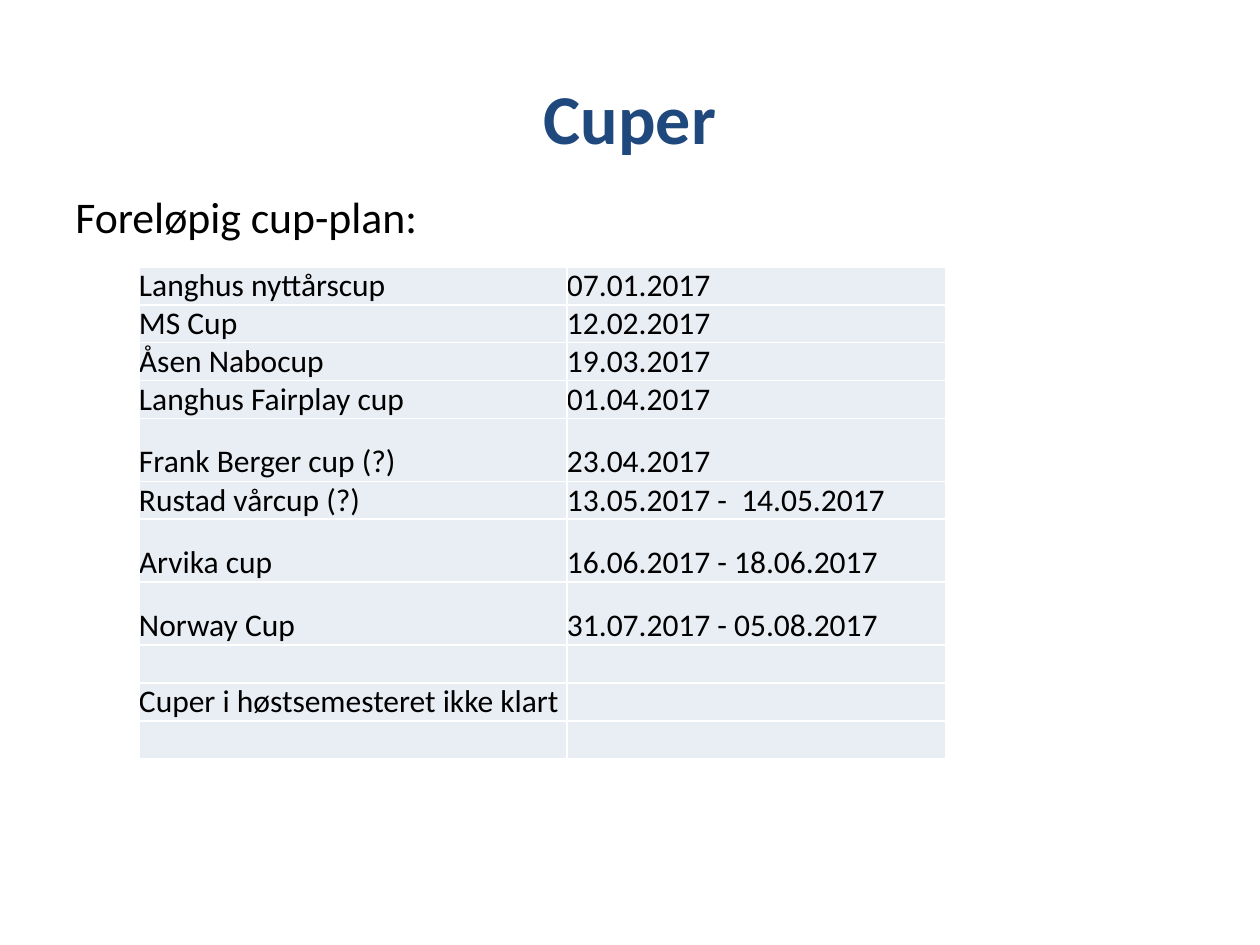
from lxml import etree
from pptx import Presentation
from pptx import util as u
from pptx.dml.color import RGBColor
from pptx.enum import text
from pptx.oxml.ns import qn

PX = 914400 // 126
COLORS = {"title": "1F497D", "body": "000000", "cell": "E9EDF4", "border": "FFFFFF"}


def write(tf, words, size, color="body", bold=False, align=text.PP_ALIGN.LEFT, before=0):
    tf.word_wrap = True
    p = tf.paragraphs[0]
    p.alignment = align
    p.space_before = u.Pt(before)
    r = p.add_run()
    r.text = words
    r.font.name = "Calibri"
    r.font.size = u.Pt(size)
    r.font.bold = bold
    r.font.color.rgb = RGBColor.from_string(COLORS[color])


def add_borders(cell):
    tc_pr = cell._tc.get_or_add_tcPr()
    for side in ("lnL", "lnR", "lnT", "lnB"):
        ln = etree.SubElement(tc_pr, qn(f"a:{side}"), w=str(u.Pt(1)))
        fill = etree.SubElement(ln, qn("a:solidFill"))
        etree.SubElement(fill, qn("a:srgbClr"), val=COLORS["border"])


prs = Presentation()
prs.slide_width = u.Inches(10)
prs.slide_height = u.Inches(7.5)
s = prs.slides.add_slide(prs.slide_layouts[6])

title = s.shapes.add_textbox(63 * PX, 38 * PX, 1134 * PX, 158 * PX)
title.text_frame.vertical_anchor = text.MSO_ANCHOR.MIDDLE
write(title.text_frame, "Cuper", 40, color="title", bold=True, align=text.PP_ALIGN.CENTER)

body = s.shapes.add_textbox(63 * PX, 184 * PX, 1134 * PX, 660 * PX)
write(body.text_frame, "Foreløpig cup-plan:", 25)

LOW, HIGH = 34, 63
cups = [
    ("Langhus nyttårscup", "07.01.2017", LOW),
    ("MS Cup", "12.02.2017", LOW),
    ("Åsen Nabocup", "19.03.2017", LOW),
    ("Langhus Fairplay cup", "01.04.2017", LOW),
    ("Frank Berger cup (?)", "23.04.2017", HIGH),
    ("Rustad vårcup (?)", "13.05.2017 -  14.05.2017", LOW),
    ("Arvika cup", "16.06.2017 - 18.06.2017", HIGH),
    ("Norway Cup", "31.07.2017 - 05.08.2017", HIGH),
    ("", "", LOW),
    ("Cuper i høstsemesteret ikke klart", "", LOW),
    ("", "", LOW),
]
widths = [428, 379]
height = sum(cup[-1] for cup in cups)
table = s.shapes.add_table(
    len(cups), len(widths), 139 * PX, 267 * PX, sum(widths) * PX, height * PX
).table
table.first_row = table.horz_banding = False
for column, width in zip(table.columns, widths):
    column.width = width * PX

for row, (name, date, row_height) in zip(table.rows, cups):
    row.height = row_height * PX
    for cell, words in zip(row.cells, (name, date)):
        cell.margin_left = cell.margin_right = cell.margin_top = cell.margin_bottom = 0
        cell.vertical_anchor = text.MSO_ANCHOR.BOTTOM
        add_borders(cell)
        cell.fill.solid()
        cell.fill.fore_color.rgb = RGBColor.from_string(COLORS["cell"])
        if words:
            write(cell.text_frame, words, 18)

prs.save("out.pptx")
